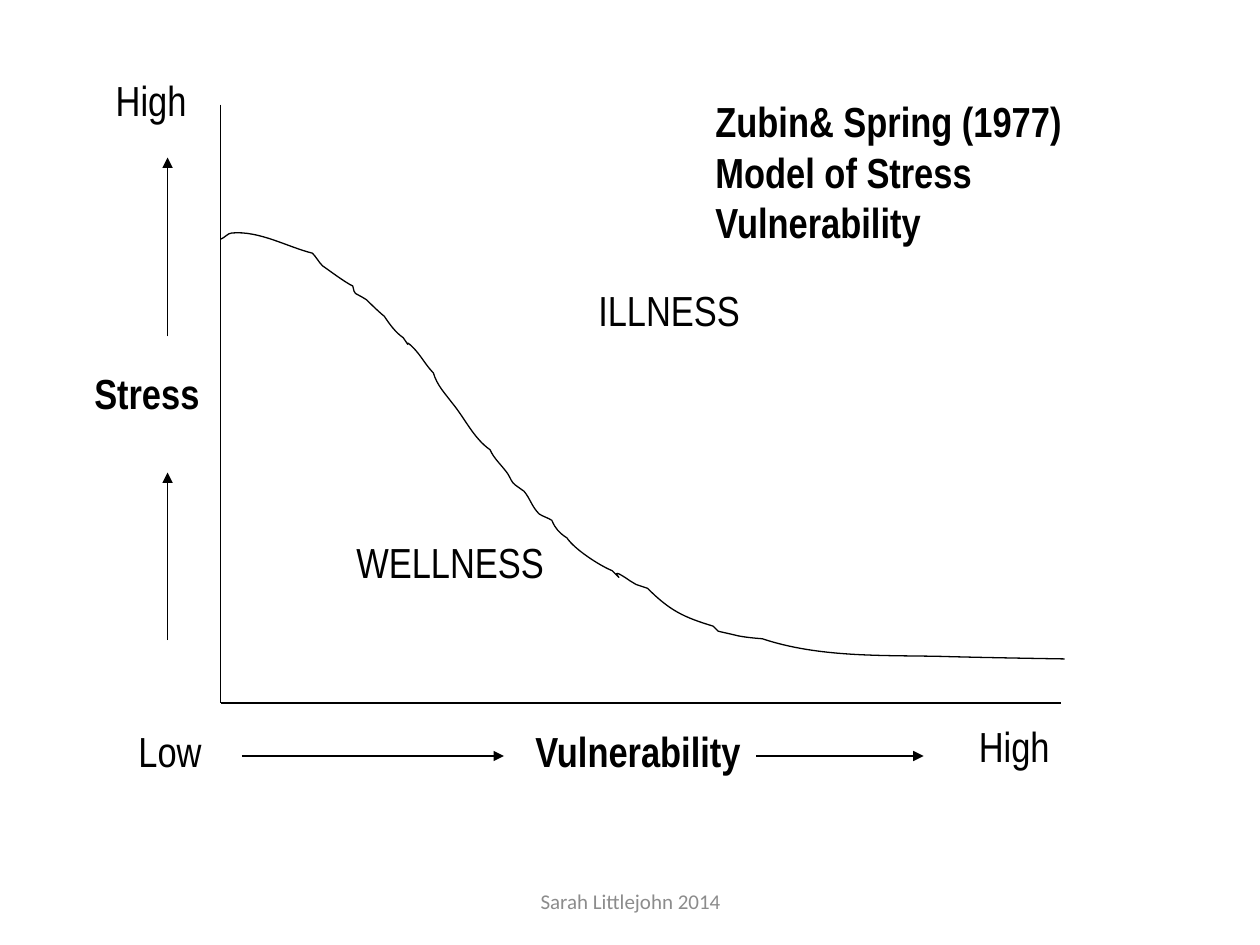
from itertools import chain

from lxml.etree import SubElement
from pptx import Presentation
from pptx.dml.color import RGBColor
from pptx.enum.shapes import MSO_CONNECTOR
from pptx.enum.text import MSO_ANCHOR, MSO_AUTO_SIZE, PP_ALIGN
from pptx.oxml.ns import qn
from pptx.util import Inches, Pt

COLORS = {"ink": "000000", "footer": "8C8C8C"}
LABEL_FONT, FOOTER_FONT = "Arial Narrow", "Calibri"

# Lines of text, (left, top, width, height), bold, wrap
LABELS = [
    (["Stress"], (0.65, 2.87, 1.04, 0.5), True, False),
    (["Vulnerability"], (4.15, 5.71, 1.84, 0.5), True, False),
    (["Low"], (1, 5.71, 0.92, 0.5), False, True),
    (["High"], (7.67, 5.67, 0.77, 0.5), False, True),
    (["High"], (0.82, 0.54, 0.77, 0.5), False, False),
    (["ILLNESS"], (4.65, 2.21, 1.33, 0.5), False, False),
    (["WELLNESS"], (2.73, 4.21, 1.69, 0.5), False, False),
    (["Zubin& Spring (1977)", "Model of Stress Vulnerability"],
     (5.58, 0.71, 3.83, 1.31), True, True),
]
FOOTER = ("Sarah Littlejohn 2014", (3.42, 6.95, 3.17, 0.4))

# Start and end points
AXES = [((1.75, 0.83), (1.75, 5.58)), ((1.75, 5.58), (8.42, 5.58))]
ARROWS = [
    ((1.92, 6), (4, 6)),
    ((6, 6), (7.33, 6)),
    ((1.33, 5.08), (1.33, 3.75)),
    ((1.33, 2.67), (1.33, 1.25)),
]

# Threshold between wellness and illness: cubic Bezier pieces, each given
# as two control points and an end point
CURVE_START = (1.75, 1.9)
CURVE = [
    ((1.78, 1.89), (1.81, 1.85), (1.84, 1.85)),
    ((2.06, 1.83), (2.28, 1.96), (2.48, 2.01)),
    ((2.51, 2.04), (2.53, 2.08), (2.56, 2.11)),
    ((2.59, 2.13), (2.75, 2.25), (2.8, 2.27)),
    ((2.82, 2.35), (2.8, 2.31), (2.91, 2.38)),
    ((2.91, 2.38), (3.01, 2.48), (3.05, 2.51)),
    ((3.09, 2.57), (3.14, 2.64), (3.2, 2.68)),
    ((3.29, 2.81), (3.18, 2.66), (3.28, 2.76)),
    ((3.34, 2.82), (3.38, 2.9), (3.44, 2.96)),
    ((3.47, 3.06), (3.53, 3.12), (3.59, 3.2)),
    ((3.69, 3.32), (3.76, 3.48), (3.89, 3.57)),
    ((3.92, 3.64), (3.98, 3.69), (4.03, 3.76)),
    ((4.05, 3.79), (4.06, 3.83), (4.09, 3.85)),
    ((4.11, 3.87), (4.14, 3.88), (4.16, 3.9)),
    ((4.21, 3.96), (4.22, 4.02), (4.28, 4.08)),
    ((4.31, 4.1), (4.35, 4.11), (4.38, 4.13)),
    ((4.41, 4.2), (4.44, 4.23), (4.5, 4.27)),
    ((4.56, 4.36), (4.76, 4.49), (4.86, 4.53)),
    ((5.01, 4.68), (4.77, 4.45), (5, 4.61)),
    ((5.02, 4.62), (5.03, 4.63), (5.05, 4.64)),
    ((5.08, 4.65), (5.14, 4.67), (5.14, 4.67)),
    ((5.32, 4.85), (5.43, 4.9), (5.66, 4.97)),
    ((5.67, 4.98), (5.69, 5), (5.7, 5.01)),
    ((5.74, 5.02), (5.79, 5.03), (5.83, 5.04)),
    ((5.9, 5.06), (6.05, 5.07), (6.05, 5.07)),
    ((6.5, 5.22), (7, 5.2), (7.47, 5.21)),
    ((7.8, 5.22), (8.45, 5.23), (8.45, 5.23)),
]


def color(name):
    return RGBColor.from_string(COLORS[name])


def style_line(line):
    line.color.rgb = color("ink")
    line.width = Pt(0.75)


def add_line(slide, start, end, arrow=False):
    connector = slide.shapes.add_connector(
        MSO_CONNECTOR.STRAIGHT, *map(Inches, start + end))
    style_line(connector.line)
    if arrow:
        SubElement(connector.line._get_or_add_ln(), qn("a:tailEnd"), type="triangle")
    SubElement(connector._element.spPr, qn("a:effectLst"))


def add_text(slide, lines, box, font_name, size, ink, bold=False, wrap=True):
    frame = slide.shapes.add_textbox(*map(Inches, box)).text_frame
    frame.word_wrap = wrap
    frame.text = "\n".join(lines)
    for paragraph in frame.paragraphs:
        font = paragraph.font
        font.name, font.size, font.bold = font_name, Pt(size), bold
        font.color.rgb = color(ink)
    return frame


def add_curve(slide):
    """Draw the pieces as line segments, then turn each three into a Bezier."""
    builder = slide.shapes.build_freeform(*map(Inches, CURVE_START))
    points = [(Inches(x), Inches(y)) for x, y in chain.from_iterable(CURVE)]
    builder.add_line_segments(points, close=False)
    curve = builder.convert_to_shape()

    segments = list(curve._element.iter(qn("a:lnTo")))
    outline = segments[0].getparent()
    for first in range(0, len(segments), 3):
        bezier = SubElement(outline, qn("a:cubicBezTo"))
        for segment in segments[first:first + 3]:
            bezier.append(segment[0])
            outline.remove(segment)

    curve.fill.background()
    style_line(curve.line)
    curve.shadow.inherit = False


def main():
    deck = Presentation()
    deck.slide_width, deck.slide_height = Inches(10), Inches(7.5)
    slide = deck.slides.add_slide(deck.slide_layouts[6])

    for start, end in AXES:
        add_line(slide, start, end)
    for start, end in ARROWS:
        add_line(slide, start, end, arrow=True)
    add_curve(slide)

    for lines, box, bold, wrap in LABELS:
        frame = add_text(slide, lines, box, LABEL_FONT, 24, "ink", bold, wrap)
        frame.auto_size = MSO_AUTO_SIZE.SHAPE_TO_FIT_TEXT

    credit, box = FOOTER
    footer = add_text(slide, [credit], box, FOOTER_FONT, 12, "footer")
    footer.vertical_anchor = MSO_ANCHOR.MIDDLE
    footer.paragraphs[0].alignment = PP_ALIGN.CENTER

    deck.save("out.pptx")


if __name__ == "__main__":
    main()
